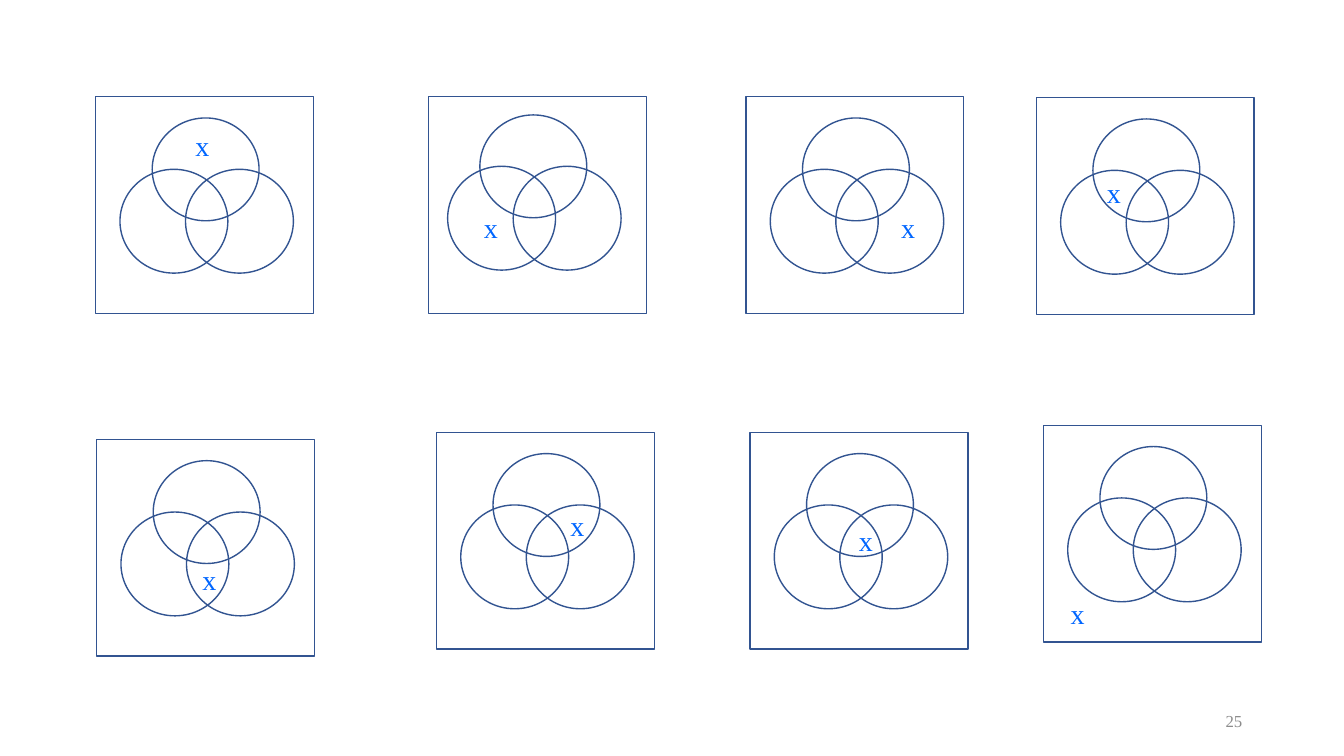
from pptx import Presentation
from pptx.dml.color import RGBColor
from pptx.enum.shapes import MSO_SHAPE
from pptx.enum.text import MSO_ANCHOR, MSO_AUTO_SIZE, PP_ALIGN
from pptx.util import Emu, Pt

PX = 9144  # 100 px to the inch
NAVY = RGBColor(0x32, 0x54, 0x91)
BLUE = RGBColor(0x00, 0x66, 0xFF)
GREY = RGBColor(0x8C, 0x8C, 0x8C)

FRAME = (216, 215)
MARK = (34, 44)
# Offset from the frame corner, then size: left, top and right circle
CIRCLES = [(24, 72, 107, 103), (56, 21, 106, 102), (89, 72, 107, 103)]

# Frame corner, shift of the circles inside it, corner of the x mark
DIAGRAMS = [
    ((95, 96), (0, 0), (184, 123)),
    ((425, 96), (-5, -3), (470, 204)),
    ((740, 96), (0, 0), (884, 204)),
    ((1028, 97), (0, 0), (1088, 169)),
    ((96, 436), (0, 0), (191, 553)),
    ((433, 429), (0, 0), (556, 500)),
    ((744, 429), (0, 0), (842, 514)),
    ((1035, 422), (0, 0), (1052, 587)),
]


def emu(*lengths):
    return [Emu(n * PX) for n in lengths]


class VennSlide:
    font = "Times New Roman"
    line_width = Pt(1)

    def __init__(self, prs):
        self.slide = prs.slides.add_slide(prs.slide_layouts[6])

    def outline(self, parent, kind, x, y, w, h):
        sp = parent.shapes.add_shape(kind, *emu(x, y, w, h))
        sp.shadow.inherit = False
        sp.fill.background()
        sp.line.color.rgb = NAVY
        sp.line.width = self.line_width

    def text(self, text, x, y, w, h, size, color, align=PP_ALIGN.LEFT, **frame):
        """Add a one-line text box; frame holds text frame settings."""
        tf = self.slide.shapes.add_textbox(*emu(x, y, w, h)).text_frame
        for name, value in frame.items():
            setattr(tf, name, value)
        p = tf.paragraphs[0]
        p.alignment = align
        r = p.add_run()
        r.text = text
        for name, value in {"name": self.font, "size": Pt(size)}.items():
            setattr(r.font, name, value)
        r.font.color.rgb = color

    def diagram(self, corner, shift, mark):
        """Add a grouped frame with three circles, and its x mark."""
        x, y = corner
        dx, dy = shift
        group = self.slide.shapes.add_group_shape()
        self.outline(group, MSO_SHAPE.RECTANGLE, x, y, *FRAME)
        for left, top, w, h in CIRCLES:
            self.outline(group, MSO_SHAPE.OVAL, x + dx + left, y + dy + top, w, h)
        self.text("x", *mark, *MARK, 20, BLUE, word_wrap=False,
                  auto_size=MSO_AUTO_SIZE.SHAPE_TO_FIT_TEXT)


def main():
    prs = Presentation()
    prs.slide_width, prs.slide_height = emu(1333, 750)
    venn = VennSlide(prs)
    for corner, shift, mark in DIAGRAMS:
        venn.diagram(corner, shift, mark)
    venn.text("25", 942, 695, 300, 40, 12, GREY, PP_ALIGN.RIGHT,
              word_wrap=True, vertical_anchor=MSO_ANCHOR.MIDDLE)
    prs.save("out.pptx")


if __name__ == "__main__":
    main()
